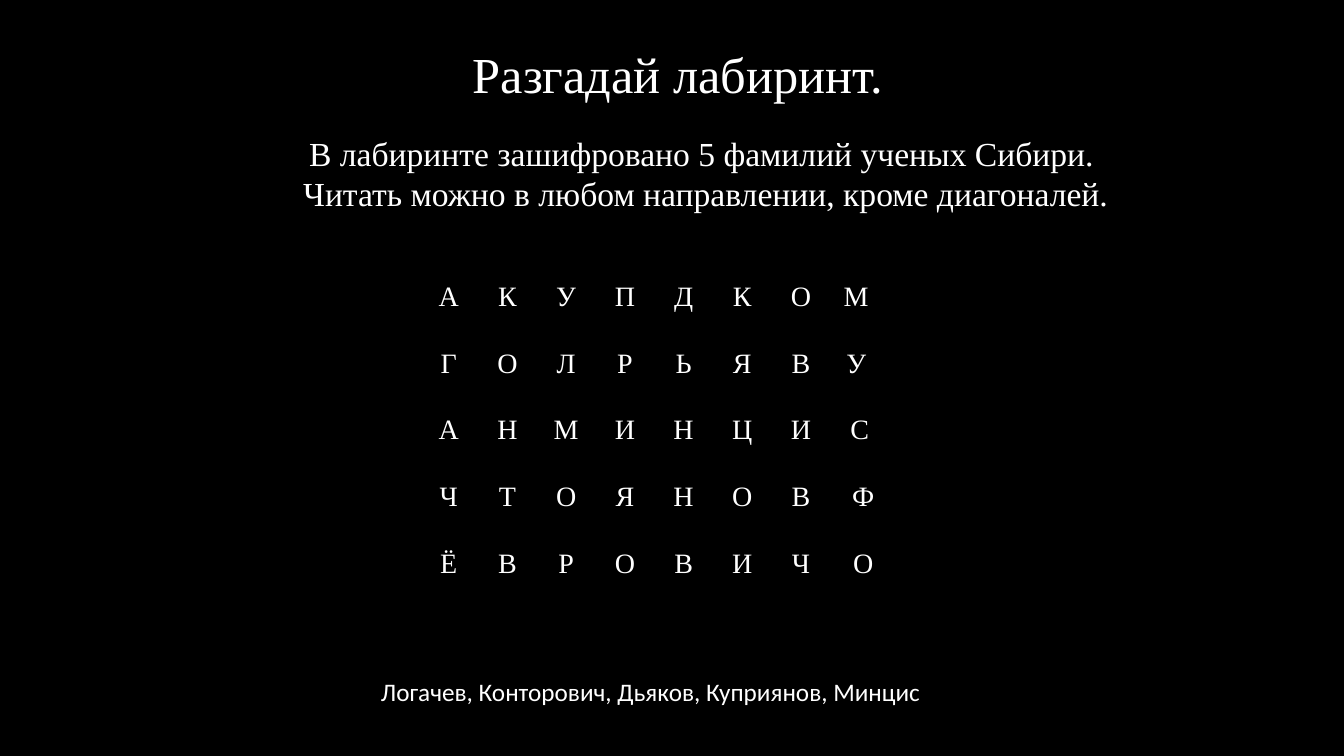
import pptx
import pptx.dml.color
import pptx.enum.text
import pptx.oxml
import pptx.oxml.ns
import pptx.util

Inches = pptx.util.Inches
Pt = pptx.util.Pt
CENTER = pptx.enum.text.PP_ALIGN.CENTER
LEFT = pptx.enum.text.PP_ALIGN.LEFT

COLORS = {"background": "000000", "text": "FFFFFF", "grid": "000000"}
SERIF = "Times New Roman"
SANS = "Calibri"

LABYRINTH = ["АКУПДКОМ", "ГОЛРЬЯВУ", "АНМИНЦИС", "ЧТОЯНОВФ", "ЁВРОВИЧО"]
LAST_LETTER_INDENTS = [(0, 0.07), (0, 0.07), (0, 0), (0.07, 0), (0.07, 0)]
CELL_MARGIN = 0.07


def rgb(name):
    return pptx.dml.color.RGBColor.from_string(COLORS[name])


def write_line(paragraph, words, size, font, align):
    paragraph.alignment = align
    run = paragraph.add_run()
    run.text = words
    run.font.size = Pt(size)
    run.font.name = font
    run.font.color.rgb = rgb("text")


def add_caption(slide, box, lines, size, font=SERIF, align=LEFT, wrap=False):
    frame = slide.shapes.add_textbox(*map(Inches, box)).text_frame
    frame.word_wrap = wrap
    frame.auto_size = pptx.enum.text.MSO_AUTO_SIZE.SHAPE_TO_FIT_TEXT
    for number, words in enumerate(lines):
        paragraph = frame.add_paragraph() if number else frame.paragraphs[0]
        write_line(paragraph, words, size, font, align)


def outline_cell(cell):
    properties = cell._tc.get_or_add_tcPr()
    for position, side in enumerate(("lnL", "lnR", "lnT", "lnB")):
        border = pptx.oxml.parse_xml(
            f'<a:{side} {pptx.oxml.ns.nsdecls("a")} w="12700"><a:solidFill>'
            f'<a:srgbClr val="{COLORS["grid"]}"/></a:solidFill></a:{side}>'
        )
        properties.insert(position, border)


def fill_letter_cell(cell, letter):
    cell.margin_left = cell.margin_right = Inches(CELL_MARGIN)
    cell.margin_top = cell.margin_bottom = 0
    cell.fill.background()
    outline_cell(cell)
    paragraph = cell.text_frame.paragraphs[0]
    paragraph.line_spacing = 1.07
    write_line(paragraph, letter, 20, SERIF, CENTER)


def add_labyrinth(slide, box, words):
    left, top, width, height = map(Inches, box)
    column_count = len(words[0])
    grid = slide.shapes.add_table(
        len(words), column_count, left, top, width, height
    ).table
    grid.first_row = False
    grid.horz_banding = False
    for column in grid.columns:
        column.width = width // column_count
    for row, word, (before, after) in zip(grid.rows, words, LAST_LETTER_INDENTS):
        row.height = height // len(words)
        for cell, letter in zip(row.cells, word):
            fill_letter_cell(cell, letter)
        last_cell = row.cells[column_count - 1]
        last_cell.margin_left = Inches(CELL_MARGIN + before)
        last_cell.margin_right = Inches(CELL_MARGIN + after)


def build_puzzle_slide(presentation):
    slide = presentation.slides.add_slide(presentation.slide_layouts[6])
    slide.background.fill.solid()
    slide.background.fill.fore_color.rgb = rgb("background")
    add_caption(slide, (4.59, 0.38, 4.32, 0.71), ["Разгадай лабиринт."], 36)
    rules = [
        "В лабиринте зашифровано 5 фамилий ученых Сибири. ",
        "Читать можно в любом направлении, кроме диагоналей.",
    ]
    add_caption(slide, (2.78, 1.27, 8.44, 0.91), rules, 24, align=CENTER, wrap=True)
    add_labyrinth(slide, (4.16, 2.77, 4.66, 3.31), LABYRINTH)
    answers = ["Логачев, Конторович, Дьяков, Куприянов, Минцис"]
    add_caption(slide, (3.68, 6.66, 5.61, 0.4), answers, 18, font=SANS)


def main():
    presentation = pptx.Presentation()
    presentation.slide_width = Inches(13.33)
    presentation.slide_height = Inches(7.5)
    build_puzzle_slide(presentation)
    presentation.save("out.pptx")


if __name__ == "__main__":
    main()
